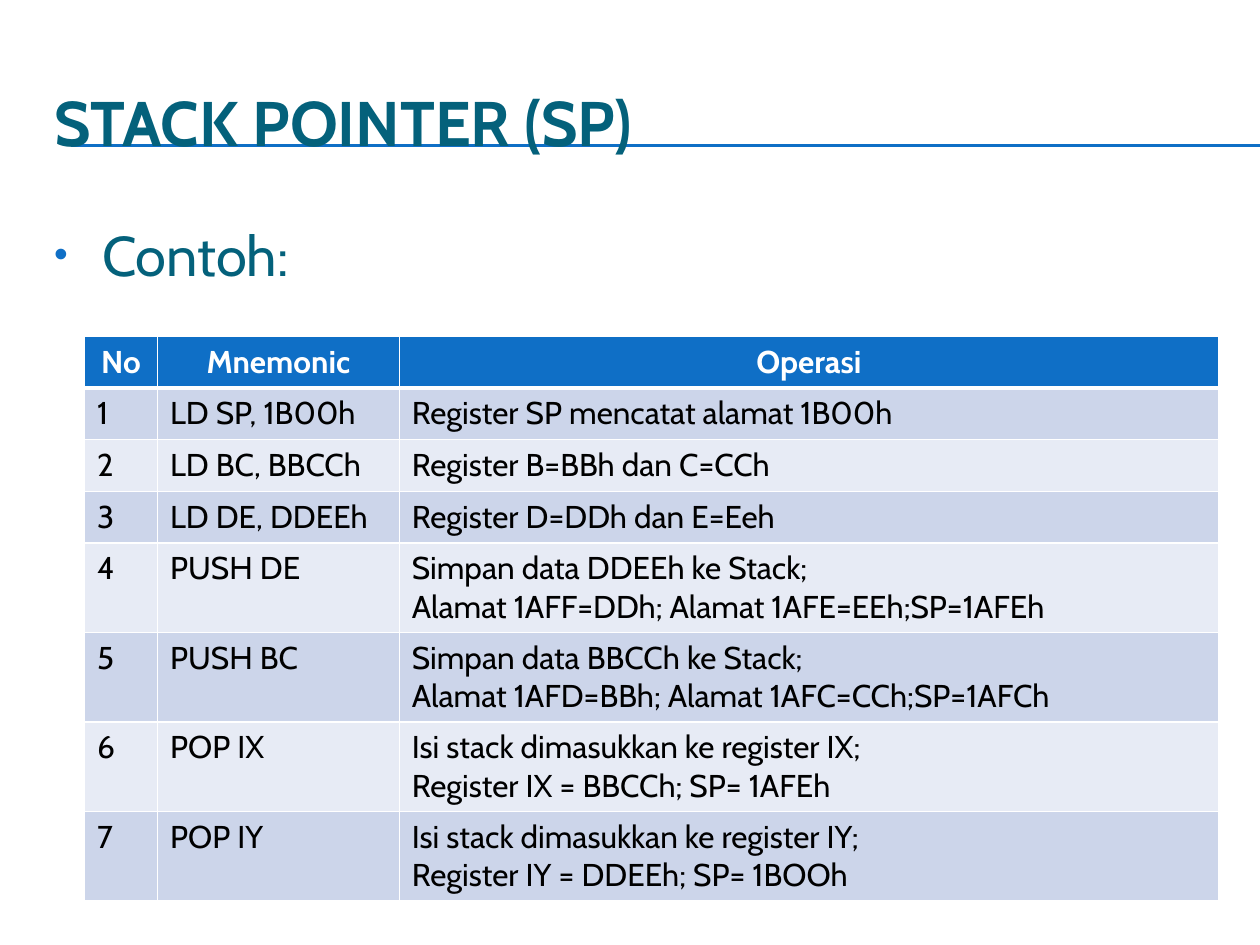
"""Build the Stack Pointer slide with its table of example instructions."""
import pptx
import pptx.dml.color
import pptx.enum.shapes
import pptx.enum.text
import pptx.oxml
import pptx.oxml.ns
import pptx.util

Inches = pptx.util.Inches
Pt = pptx.util.Pt
ALIGN = pptx.enum.text.PP_ALIGN
ANCHOR = pptx.enum.text.MSO_ANCHOR

COLORS = {
    "heading": "04617B",
    "accent": "0F6FC6",
    "odd_row": "CCD5EA",
    "even_row": "E7EBF5",
    "header_text": "FFFFFF",
    "cell_text": "000000",
    "border": "FFFFFF",
}
FONT = "Cabin"
COLUMN_WIDTHS = (0.58, 1.92, 6.5)
HEADER = ("No", "Mnemonic", "Operasi")
INSTRUCTIONS = (
    ("LD SP, 1B00h", "Register SP mencatat alamat 1B00h"),
    ("LD BC, BBCCh", "Register B=BBh dan C=CCh"),
    ("LD DE, DDEEh", "Register D=DDh dan E=Eeh"),
    ("PUSH DE", "Simpan data DDEEh ke Stack;\nAlamat 1AFF=DDh; Alamat 1AFE=EEh;SP=1AFEh"),
    ("PUSH BC", "Simpan data BBCCh ke Stack;\nAlamat 1AFD=BBh; Alamat 1AFC=CCh;SP=1AFCh"),
    ("POP IX", "Isi stack dimasukkan ke register IX;\nRegister IX = BBCCh; SP= 1AFEh"),
    ("POP IY", "Isi stack dimasukkan ke register IY;\nRegister IY = DDEEh; SP= 1BOOh"),
)


def rgb(name):
    return pptx.dml.color.RGBColor.from_string(COLORS[name])


def apply(target, values):
    for attribute, value in values.items():
        setattr(target, attribute, value)


def append_xml(parent, body):
    tag, rest = body.split(" ", 1)
    parent.append(pptx.oxml.parse_xml(f"<a:{tag} {pptx.oxml.ns.nsdecls('a')} {rest}"))


def format_text(frame, size, color, bold=False, align=ALIGN.LEFT):
    for paragraph in frame.paragraphs:
        paragraph.alignment = align
        for run in paragraph.runs:
            apply(run.font, {"name": FONT, "size": Pt(size), "bold": bold})
            run.font.color.rgb = rgb(color)


def fill_placeholder(placeholder, text, box, anchor, **text_format):
    apply(placeholder, dict(zip(("left", "top", "width", "height"), map(Inches, box))))
    frame = placeholder.text_frame
    frame.text = text
    apply(frame, {"auto_size": pptx.enum.text.MSO_AUTO_SIZE.NONE,
                  "vertical_anchor": anchor, "word_wrap": True})
    format_text(frame, **text_format)


def set_bullet(paragraph):
    properties = paragraph._p.get_or_add_pPr()
    properties.set("marL", str(Inches(0.38)))
    properties.set("indent", str(-Inches(0.38)))
    append_xml(properties, f'buClr ><a:srgbClr val="{COLORS["accent"]}"/></a:buClr>')
    append_xml(properties, 'buSzPct val="70000"/>')
    append_xml(properties, 'buChar char="•"/>')


def add_rule(slide, y):
    rule = slide.shapes.add_connector(
        pptx.enum.shapes.MSO_CONNECTOR.STRAIGHT,
        Inches(0.56), Inches(y), Inches(10), Inches(y))
    rule.line.color.rgb = rgb("accent")
    rule.line.width = Pt(0.75)
    append_xml(rule.element.spPr, "effectLst />")
    slide.shapes.title.element.addprevious(rule.element)


def set_borders(cell, top, bottom):
    properties = cell._tc.get_or_add_tcPr()
    for side, width in {"L": 1, "R": 1, "T": top, "B": bottom}.items():
        append_xml(properties, f'ln{side} w="{Pt(width)}"><a:solidFill><a:srgbClr '
                               f'val="{COLORS["border"]}"/></a:solidFill></a:ln{side}>')


def fill_cell(cell, text, fill, top=1, bottom=1, **text_format):
    cell.text = text
    format_text(cell.text_frame, 18, **text_format)
    set_borders(cell, top, bottom)
    cell.fill.solid()
    cell.fill.fore_color.rgb = rgb(fill)


def add_instruction_table(slide):
    rows = [HEADER] + [(str(number), *instruction)
                       for number, instruction in enumerate(INSTRUCTIONS, 1)]
    heights = [0.71 if "\n" in row[-1] else 0.41 for row in rows]
    table = slide.shapes.add_table(
        len(rows), len(HEADER), Inches(0.67), Inches(2.67),
        Inches(sum(COLUMN_WIDTHS)), Inches(sum(heights))).table
    for column, width in zip(table.columns, COLUMN_WIDTHS):
        column.width = Inches(width)
    for index, (row, height) in enumerate(zip(rows, heights)):
        table.rows[index].height = Inches(height)
        if index == 0:
            style = {"fill": "accent", "bottom": 3, "color": "header_text",
                     "bold": True, "align": ALIGN.CENTER}
        else:
            style = {"fill": "odd_row" if index % 2 else "even_row",
                     "top": 3 if index == 1 else 1, "color": "cell_text"}
        for cell, text in zip(table.rows[index].cells, row):
            fill_cell(cell, text, **style)


def main():
    presentation = pptx.Presentation()
    apply(presentation, {"slide_width": Inches(10), "slide_height": Inches(7.5)})
    slide = presentation.slides.add_slide(presentation.slide_layouts[1])
    title, body = slide.placeholders
    for y in (1.15, 1.16):
        add_rule(slide, y)
    fill_placeholder(title, "STACK POINTER (SP)", (0.33, 0.5, 9.5, 0.92),
                     ANCHOR.MIDDLE, size=36, color="heading", bold=True)
    fill_placeholder(body, "Contoh:", (0.33, 1.7, 9.5, 4.95),
                     ANCHOR.TOP, size=32, color="heading")
    set_bullet(body.text_frame.paragraphs[0])
    add_instruction_table(slide)
    presentation.save("out.pptx")


if __name__ == "__main__":
    main()
